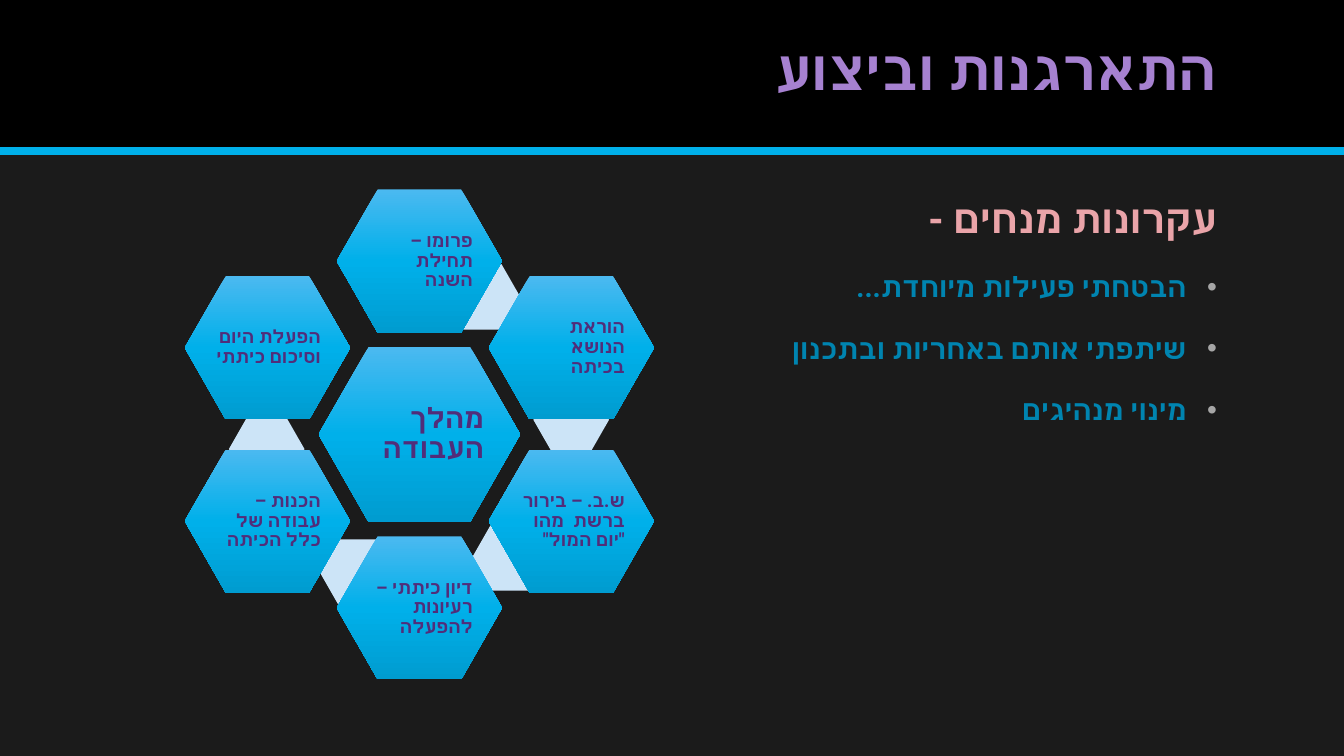
from copy import deepcopy
from math import cos, radians, sin

from lxml.etree import SubElement
from pptx import Presentation
from pptx.dml.color import RGBColor
from pptx.enum.shapes import MSO_CONNECTOR as LINK, MSO_SHAPE as SHAPE
from pptx.enum.text import MSO_ANCHOR as ANCHOR, MSO_AUTO_SIZE as FIT, PP_ALIGN as ALIGN
from pptx.oxml.ns import qn
from pptx.util import Inches, Pt

FONT = "Roboto"
DARK = RGBColor(0x1B, 0x1B, 0x1B)
BLACK = RGBColor(0x00, 0x00, 0x00)
CYAN = RGBColor(0x00, 0xB0, 0xEA)
SKY = RGBColor(0x4B, 0xB9, 0xF0)
DEEP = RGBColor(0x00, 0x9C, 0xD0)
PALE = RGBColor(0xCC, 0xE4, 0xF7)
LILAC = RGBColor(0xA6, 0x81, 0xD0)
PINK = RGBColor(0xEA, 0xA4, 0xA9)
TEAL = RGBColor(0x00, 0x84, 0xB0)
PLUM = RGBColor(0x51, 0x2D, 0x7A)
GREY = RGBColor(0xA6, 0xA6, 0xA6)

TITLE = "התארגנות וביצוע"
HEAD = "עקרונות מנחים -"
POINTS = [
    "הבטחתי פעילות מיוחדת...",
    "שיתפתי אותם באחריות ובתכנון",
    "מינוי מנהיגים",
]
CORE = "מהלך העבודה"
STEPS = [
    ("פרומו – תחילת השנה", (4.41, 2.62)),
    ("הוראת הנושא בכיתה", (5.29, 3.84)),
    ("ש.ב. – בירור ברשת  מהו  \"יום המול\"", (4.68, 5.21)),
    ("דיון כיתתי – רעיונות להפעלה", (3.17, 5.35)),
    ("הכנות – עבודה של כלל הכיתה", (2.27, 4.13)),
    ("הפעלת היום וסיכום כיתתי", None),
]


class Deck:
    """Hold the style and the current slide."""

    def __init__(self):
        """Open a wide deck with one dark slide."""
        self.prs = Presentation()
        self.prs.slide_width = Inches(13.33)
        self.prs.slide_height = Inches(7.5)
        self.slide = self.prs.slides.add_slide(self.prs.slide_layouts[1])
        self.shapes = self.slide.shapes
        fill = self.slide.background.fill
        fill.solid()
        fill.fore_color.rgb = DARK

    def place(self, shape, x, y, w, h):
        """Move and size a placeholder."""
        shape.left, shape.top = Inches(x), Inches(y)
        shape.width, shape.height = Inches(w), Inches(h)

    def style(self, para, size, color):
        """Format a right-to-left paragraph and its runs."""
        para.alignment = ALIGN.RIGHT
        para._p.get_or_add_pPr().set("rtl", "1")
        for run in para.runs:
            font = run.font
            font.name, font.size, font.bold = FONT, Pt(size), True
            font.color.rgb = color
            SubElement(run._r.rPr, qn("a:cs"), typeface=FONT)

    def bullet(self, para, mark):
        """Set the bullet and hanging indent, or clear both."""
        props = para._p.get_or_add_pPr()
        indent = Inches(0.3) if mark else 0
        props.set("marL", str(indent))
        props.set("indent", str(-indent))
        if mark:
            tint = SubElement(props, qn("a:buClr"))
            SubElement(tint, qn("a:srgbClr"), val=str(GREY))
            SubElement(props, qn("a:buFont"), typeface="Arial")
            SubElement(props, qn("a:buChar"), char=mark)
        else:
            SubElement(props, qn("a:buNone"))

    def band(self):
        """Draw the black header band and its cyan rule."""
        wide, edge = self.prs.slide_width, Inches(1.5)
        box = self.shapes.add_shape(SHAPE.RECTANGLE, 0, 0, wide, edge)
        box.shadow.inherit = False
        box.fill.solid()
        box.fill.fore_color.rgb = BLACK
        box.line.fill.background()
        rule = self.shapes.add_connector(LINK.STRAIGHT, 0, edge, wide, edge)
        rule.line.color.rgb = CYAN
        rule.line.width = Pt(6)
        SubElement(rule._element.spPr, qn("a:effectLst"))

    def title(self, text):
        """Fill the title and raise it above the band."""
        head = self.shapes.title
        self.place(head, 1.17, 0.12, 11, 1.2)
        frame = head.text_frame
        frame.text = text
        frame.auto_size = FIT.NONE
        frame.vertical_anchor = ANCHOR.MIDDLE
        para = frame.paragraphs[0]
        para.line_spacing = 0.9
        self.style(para, 40, LILAC)
        self.shapes[-1].element.addnext(head.element)

    def body(self, head, points):
        """Fill the list with a heading and bullets."""
        box = self.slide.placeholders[1]
        self.place(box, 6.97, 1.88, 5.2, 4.88)
        frame = box.text_frame
        frame.text = "\n".join([head, *points])
        frame.auto_size = FIT.NONE
        for i, para in enumerate(frame.paragraphs):
            self.bullet(para, "•" if i else "")
            para.space_before = Pt(20 if i else 0)
            self.style(para, 20 if i else 28, TEAL if i else PINK)

    def hexagon(self, x, y, w, h):
        """Add a hexagon with no line or shadow."""
        hexa = self.shapes.add_shape(
            SHAPE.HEXAGON, Inches(x), Inches(y), Inches(w), Inches(h))
        hexa.adjustments[0] = 0.286
        hexa.shadow.inherit = False
        hexa.line.fill.background()
        return hexa

    def accent(self, x, y):
        """Add a small pale hexagon."""
        fill = self.hexagon(x, y, 0.75, 0.65).fill
        fill.solid()
        fill.fore_color.rgb = PALE

    def cell(self, text, mid, size, area, pt, inset):
        """Add a shaded hexagon and its label around a centre."""
        (x, y), (w, h) = mid, size
        hexa = self.hexagon(x - w / 2, y - h / 2, w, h)
        fill = hexa.fill
        fill.gradient()
        first = hexa.element.spPr.find(".//" + qn("a:gs"))
        first.addnext(deepcopy(first))
        shades = [(0, SKY), (0.5, CYAN), (1, DEEP)]
        for stop, (pos, color) in zip(fill.gradient_stops, shades):
            stop.position, stop.color.rgb = pos, color
        fill.gradient_angle = 270

        w, h = area
        label = self.shapes.add_textbox(
            Inches(x - w / 2), Inches(y - h / 2), Inches(w), Inches(h))
        frame = label.text_frame
        frame.text = text
        frame.word_wrap = True
        frame.vertical_anchor = ANCHOR.MIDDLE
        frame.margin_left = frame.margin_right = Inches(inset)
        frame.margin_top = frame.margin_bottom = Inches(inset)
        para = frame.paragraphs[0]
        para.line_spacing = 0.9
        self.style(para, pt, PLUM)

    def ring(self, core, steps):
        """Draw the core and the steps clockwise from the top."""
        x, y = 4.16, 4.31
        self.cell(core, (x, y), (2, 1.73), (1.34, 1.16), 20, 0.03)
        for i, (text, spot) in enumerate(steps):
            if spot:
                self.accent(*spot)
            turn = radians(i * 360 / len(steps))
            mid = x + 1.74 * sin(turn), y - 1.72 * cos(turn)
            self.cell(text, mid, (1.64, 1.42), (1.1, 0.95), 13, 0.02)


def main():
    """Build the slide and save it."""
    deck = Deck()
    deck.band()
    deck.title(TITLE)
    deck.body(HEAD, POINTS)
    deck.ring(CORE, STEPS)
    deck.prs.save("out.pptx")


if __name__ == "__main__":
    main()
